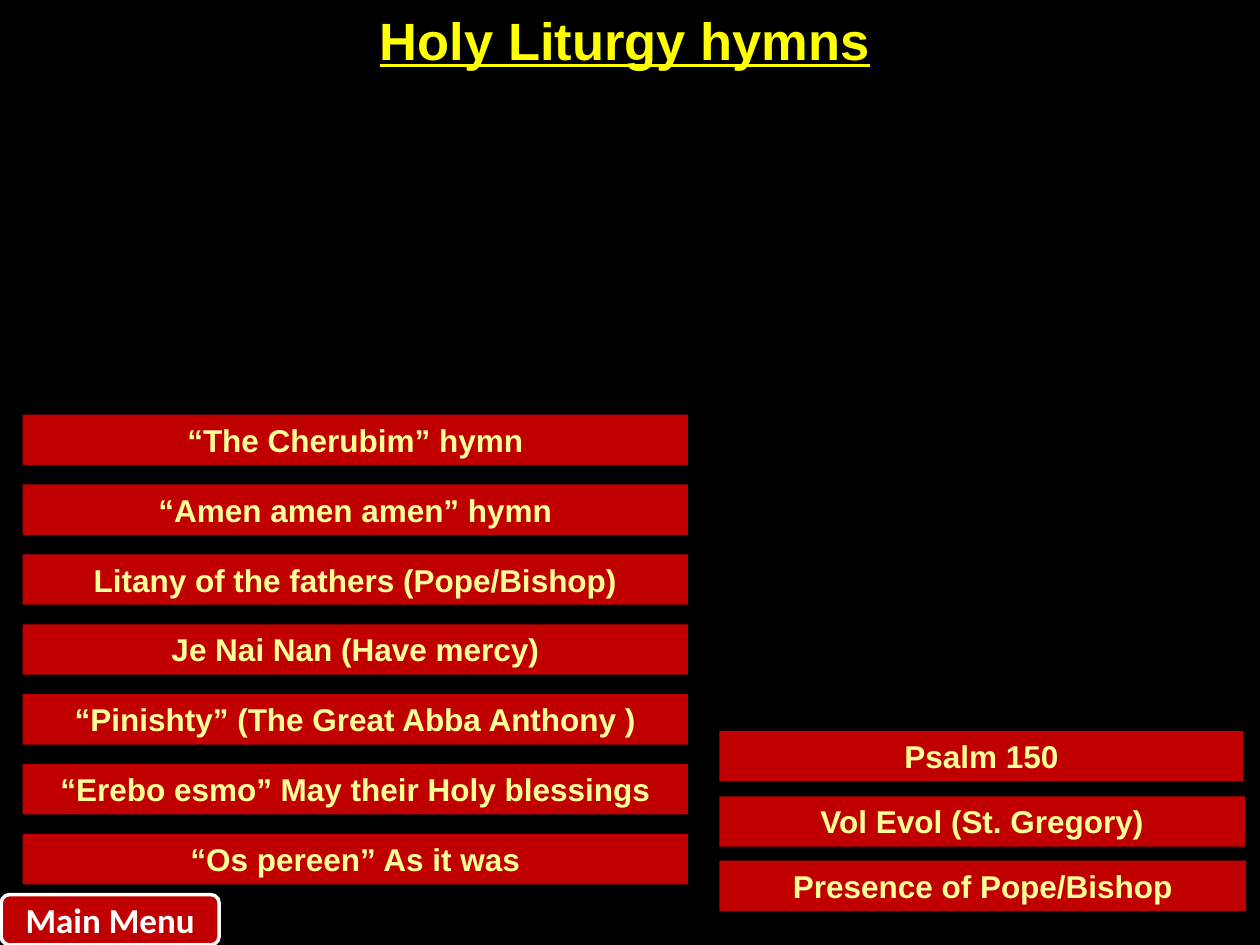
from dataclasses import dataclass

from lxml.etree import SubElement
from pptx import Presentation
from pptx.dml.color import RGBColor
from pptx.enum.shapes import MSO_SHAPE
from pptx.enum.text import MSO_ANCHOR, MSO_AUTO_SIZE, PP_ALIGN
from pptx.oxml.ns import qn
from pptx.util import Inches, Pt

RED = "C00000"
CREAM = "FFFF99"
WHITE = "FFFFFF"
YELLOW = "FFFF00"
BLACK = "000000"


@dataclass
class Button:
    text: str
    left: float
    top: float
    width: float
    height: float = 0.4
    shape: MSO_SHAPE = MSO_SHAPE.RECTANGLE
    font: str = "Arial"
    size: int = 18
    color: str = CREAM
    outline: str = ""


def paint(color_format, value: str) -> None:
    color_format.rgb = RGBColor.from_string(value)


def write(frame, text: str, font: str, size: int, color: str, underline: bool = False) -> None:
    para = frame.paragraphs[0]
    para.alignment = PP_ALIGN.CENTER
    span = para.add_run()
    span.text = text
    span.font.name = font
    span.font.size = Pt(size)
    span.font.bold = True
    if underline:
        span.font.underline = True
    paint(span.font.color, color)


def draw_title(page, text: str) -> None:
    frame = page.shapes.add_table(1, 1, Inches(0.35), Inches(0.05), Inches(9.22), Inches(0.87))
    table = frame.table
    table.first_row = False
    table.horz_banding = False
    cell = table.cell(0, 0)
    properties = cell._tc.get_or_add_tcPr()
    for side in ("a:lnL", "a:lnR", "a:lnT", "a:lnB"):
        SubElement(SubElement(properties, qn(side)), qn("a:noFill"))
    cell.fill.background()
    write(cell.text_frame, text, "Arial", 30, YELLOW, underline=True)


def draw_button(page, button: Button) -> None:
    box = page.shapes.add_shape(button.shape, Inches(button.left), Inches(button.top),
                                Inches(button.width), Inches(button.height))
    box.shadow.inherit = False
    box.fill.solid()
    paint(box.fill.fore_color, RED)
    frame = box.text_frame
    frame.word_wrap = True
    if button.outline:
        paint(box.line.color, button.outline)
        box.line.width = Pt(2)
        frame.vertical_anchor = MSO_ANCHOR.MIDDLE
    else:
        box.line.fill.background()
        frame.vertical_anchor = MSO_ANCHOR.TOP
        frame.auto_size = MSO_AUTO_SIZE.SHAPE_TO_FIT_TEXT
    write(frame, button.text, button.font, button.size, button.color)


# Page
deck = Presentation()
deck.slide_width = Inches(10)
deck.slide_height = Inches(7.5)
page = deck.slides.add_slide(deck.slide_layouts[6])
page.background.fill.solid()
paint(page.background.fill.fore_color, BLACK)

draw_title(page, "Holy Liturgy hymns")

# Left column: evenly spaced hymns
hymns = [
    "“The Cherubim” hymn",
    "“Amen amen amen” hymn",
    "Litany of the fathers (Pope/Bishop)",
    "Je Nai Nan (Have mercy)",
    "“Pinishty” (The Great Abba Anthony )",
    "“Erebo esmo” May their Holy blessings",
    "“Os pereen” As it was",
]
first_top, last_top = 3.29, 6.62
pitch = (last_top - first_top) / (len(hymns) - 1)
buttons = [Button(hymn, 0.18, first_top + row * pitch, 5.28) for row, hymn in enumerate(hymns)]

# Right column: closing hymns
buttons += [
    Button("Psalm 150", 5.71, 5.8, 4.16),
    Button("Vol Evol (St. Gregory)", 5.71, 6.32, 4.17),
    Button("Presence of Pope/Bishop", 5.71, 6.83, 4.18),
]

# Menu button
buttons.append(Button("Main Menu", 0.01, 7.1, 1.73, shape=MSO_SHAPE.ROUNDED_RECTANGLE,
                      font="Calibri", size=20, color=WHITE, outline=WHITE))

for button in buttons:
    draw_button(page, button)

deck.save("out.pptx")
